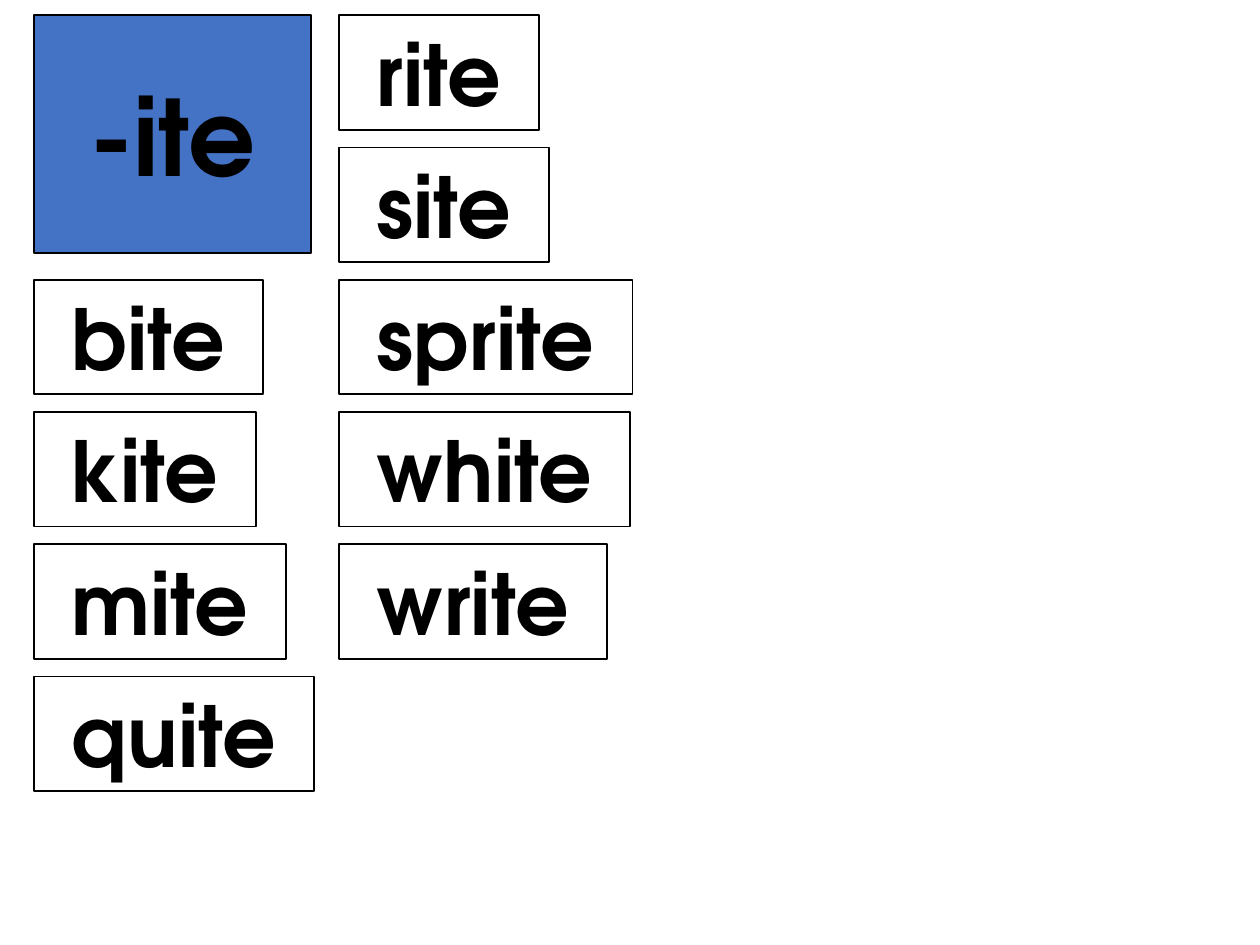
from pptx import Presentation
from pptx.dml.color import RGBColor
from pptx.enum.shapes import MSO_SHAPE
from pptx.enum.text import MSO_ANCHOR, MSO_AUTO_SIZE, PP_ALIGN
from pptx.util import Emu, Pt

PX = 9144  # EMU per px, 100 px to the inch
COLORS = {"ink": "000000", "paper": "FFFFFF", "family": "4472C4"}
FONT = "TeX Gyre Adventor"

TOP, ROW_STEP, CARD_H = 12, 105, 91
# left edge, first row, (word, card width)
COLUMNS = [
    (27, 2, [("bite", 182), ("kite", 176), ("mite", 200), ("quite", 222)]),
    (269, 0, [("rite", 159), ("site", 167), ("sprite", 233),
              ("white", 231), ("write", 213)]),
]


class WordCards:
    def __init__(self, slide):
        self.slide = slide

    def style(self, sp, text, size, fill, wrap):
        sp.fill.solid()
        sp.fill.fore_color.rgb = RGBColor.from_string(COLORS[fill])
        sp.line.color.rgb = RGBColor.from_string(COLORS["ink"])
        sp.line.width = Pt(1)
        tf = sp.text_frame
        tf.text = text
        tf.word_wrap = wrap
        tf.auto_size = MSO_AUTO_SIZE.NONE
        tf.vertical_anchor = MSO_ANCHOR.MIDDLE
        p = tf.paragraphs[0]
        p.alignment = PP_ALIGN.CENTER
        font = p.runs[0].font
        font.name, font.size, font.bold = FONT, Pt(size), True
        font.color.rgb = RGBColor.from_string(COLORS["ink"])

    def title(self, text, *box):
        sp = self.slide.shapes.title
        sp.left, sp.top, sp.width, sp.height = (Emu(v * PX) for v in box)
        self.style(sp, text, 60, "family", True)

    def card(self, text, *box):
        sp = self.slide.shapes.add_shape(
            MSO_SHAPE.RECTANGLE, *(Emu(v * PX) for v in box))
        sp.shadow.inherit = False
        self.style(sp, text, 48, "paper", False)


def main():
    prs = Presentation()
    prs.slide_width, prs.slide_height = Emu(1000 * PX), Emu(750 * PX)
    cards = WordCards(prs.slides.add_slide(prs.slide_layouts[5]))
    cards.title("-ite", 27, TOP, 220, 189)
    for left, first_row, words in COLUMNS:
        for row, (word, width) in enumerate(words, first_row):
            cards.card(word, left, TOP + row * ROW_STEP, width, CARD_H)
    prs.save("out.pptx")


if __name__ == "__main__":
    main()
